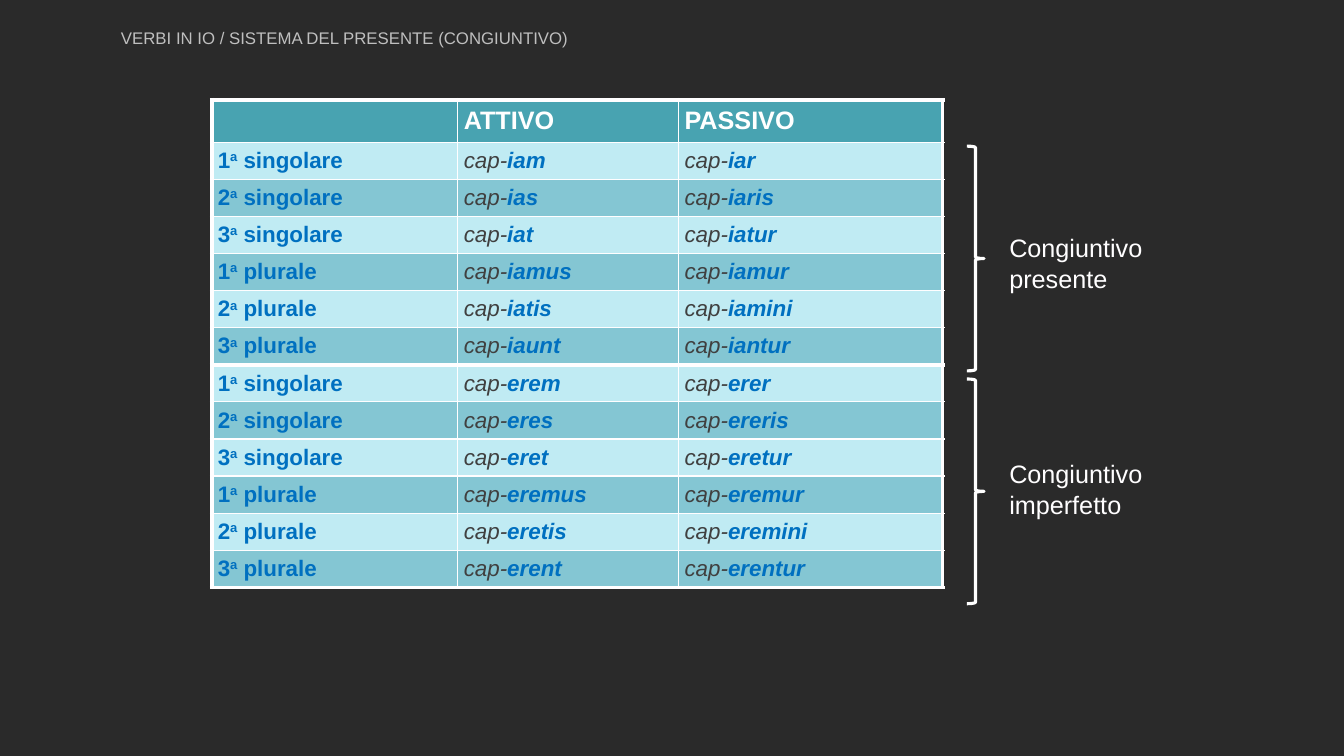
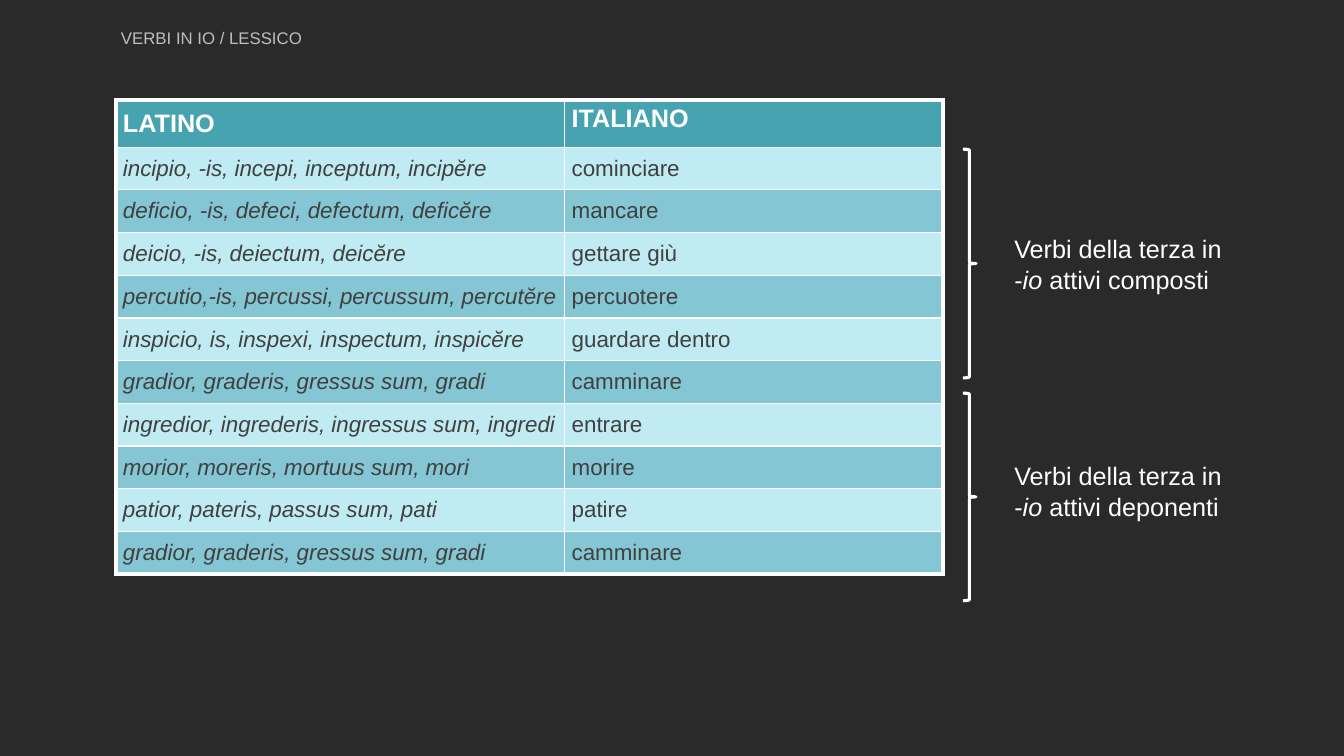
from pptx import Presentation
from pptx import util as u
from pptx.dml.color import RGBColor
from pptx.enum import shapes, text
from pptx.oxml.ns import qn
from lxml import etree

# Shared look
FONT = "Arial"
DARK, WHITE, TITLE_GREY = "2A2A2A", "FFFEFF", "BFBFBF"
HEADER, BANDS = "48A3B1", ("C0EBF3", "84C6D3")
INK, BLUE = "404040", "0070C0"
TITLE_BOX = (1.15, 0.22, 7.48, 0.3)
TABLE_TOP = 0.99
THICK, THIN = 3, 1


def rgb(color):
    return RGBColor.from_string(color)


def box(left, top, width, height):
    return [u.Inches(v) for v in (left, top, width, height)]


def add_run(p, words, size, color, bold=False, italic=False, raised=False):
    r = p.add_run()
    r.text = words
    f = r.font
    f.name, f.size, f.bold, f.italic = FONT, u.Pt(size), bold, italic
    f.color.rgb = rgb(color)
    if raised:
        r._r.get_or_add_rPr().set("baseline", "30000")


def set_margins(part, side, vertical):
    part.margin_left = part.margin_right = u.Inches(side)
    part.margin_top = part.margin_bottom = u.Inches(vertical)


def new_slide(prs, title):
    s = prs.slides.add_slide(prs.slide_layouts[5])
    sp = s.shapes.title
    sp.left, sp.top, sp.width, sp.height = box(*TITLE_BOX)
    tf = sp.text_frame
    tf.auto_size = text.MSO_AUTO_SIZE.NONE
    tf.vertical_anchor = text.MSO_ANCHOR.MIDDLE
    set_margins(tf, 0.05, 0.05)
    p = tf.paragraphs[0]
    p.alignment = text.PP_ALIGN.LEFT
    add_run(p, title, 12, TITLE_GREY)
    return s


def set_borders(cell, widths):
    """Draw the four cell edges; widths maps L, R, T, B to points."""
    tcPr = cell._tc.get_or_add_tcPr()
    for side, width in widths.items():
        ln = etree.SubElement(tcPr, qn(f"a:ln{side}"), w=str(u.Pt(width)))
        fill = etree.SubElement(ln, qn("a:solidFill"))
        etree.SubElement(fill, qn("a:srgbClr"), val=WHITE)


def add_grid(s, left, col_widths, header_height, height, rows, side, breaks=()):
    """Banded table; each cell is a list of (words, style) runs.

    Thick lines frame the table and lie above each row listed in breaks.
    """
    n, m = len(rows), len(col_widths)
    tb = s.shapes.add_table(n, m, *box(left, TABLE_TOP, sum(col_widths), height)).table
    tb.first_row = tb.horz_banding = False
    for col, width in zip(tb.columns, col_widths):
        col.width = u.Inches(width)
    body_height = (height - header_height) / (n - 1)
    thick_lines = {0, n, *breaks}
    for i, row in enumerate(rows):
        tb.rows[i].height = u.Inches(body_height if i else header_height)
        for j, runs in enumerate(row):
            cell = tb.cell(i, j)
            set_margins(cell, side, 0.05)
            cell.vertical_anchor = text.MSO_ANCHOR.MIDDLE
            set_borders(cell, {
                "L": THIN if j else THICK,
                "R": THICK if j == m - 1 else THIN,
                "T": THICK if i in thick_lines else THIN,
                "B": THICK if i + 1 in thick_lines else THIN,
            })
            cell.fill.solid()
            cell.fill.fore_color.rgb = rgb(BANDS[(i - 1) % 2] if i else HEADER)
            for words, style in runs:
                add_run(cell.text_frame.paragraphs[0], words, **style)
    return tb


def add_group(s, brace, label, runs):
    """Right brace with the label of the rows it spans."""
    sp = s.shapes.add_shape(shapes.MSO_SHAPE.RIGHT_BRACE, *box(*brace))
    sp.shadow.inherit = False
    sp.fill.background()
    sp.line.color.rgb = rgb("FFFFFF")
    sp.line.width = u.Pt(2.25)
    tf = s.shapes.add_textbox(*box(*label)).text_frame
    tf.word_wrap = True
    set_margins(tf, 0.05, 0.05)
    for words, italic in runs:
        add_run(tf.paragraphs[0], words, 18, WHITE, italic=italic)


# Cell styles
HEAD = dict(size=18, color="FFFFFF", bold=True)
PERSON = dict(size=16, color=BLUE, bold=True)
STEM = dict(size=16, color=INK, italic=True)
ENDING = dict(size=16, color=BLUE, bold=True, italic=True)
MEANING = dict(size=16, color=INK)

ENDINGS = [
    ("iam", "iar"), ("ias", "iaris"), ("iat", "iatur"),
    ("iamus", "iamur"), ("iatis", "iamini"), ("iaunt", "iantur"),
    ("erem", "erer"), ("eres", "ereris"), ("eret", "eretur"),
    ("eremus", "eremur"), ("eretis", "eremini"), ("erent", "erentur"),
]

LEXICON = [
    ("incipio, -is, incepi, inceptum, incipĕre", "cominciare"),
    ("deficio, -is, defeci, defectum, deficĕre", "mancare"),
    ("deicio, -is, deiectum, deicĕre", "gettare giù"),
    ("percutio,-is, percussi, percussum, percutĕre", "percuotere"),
    ("inspicio, is, inspexi, inspectum, inspicĕre", "guardare dentro"),
    ("gradior, graderis, gressus sum, gradi", "camminare"),
    ("ingredior, ingrederis, ingressus sum, ingredi", "entrare"),
    ("morior, moreris, mortuus sum, mori", "morire"),
    ("patior, pateris, passus sum, pati", "patire"),
    ("gradior, graderis, gressus sum, gradi", "camminare"),
]


def conjugation_slide(prs):
    s = new_slide(prs, "VERBI IN IO / SISTEMA DEL PRESENTE (CONGIUNTIVO)")
    rows = [[[], [("ATTIVO", HEAD)], [("PASSIVO", HEAD)]]]
    for i, endings in enumerate(ENDINGS):
        number = "singolare" if i % 6 < 3 else "plurale"
        person = [(str(i % 3 + 1), PERSON), ("a", dict(PERSON, raised=True)),
                  (f" {number}", PERSON)]
        rows.append([person] + [[("cap-", STEM), (e, ENDING)] for e in endings])
    add_grid(s, 2.1, (2.44, 2.19, 2.62), 0.42, 4.84, rows, side=0.06, breaks=(7,))
    for tense, brace_top, label_top in (("presente", 1.45, 2.26),
                                        ("imperfetto", 3.76, 4.5)):
        add_group(s, (9.59, brace_top, 0.17, 2.23), (9.96, label_top, 2.01, 0.71),
                  [(f"Congiuntivo {tense}", False)])


def lexicon_slide(prs):
    s = new_slide(prs, "VERBI IN IO / LESSICO")
    rows = [[[("LATINO", HEAD)], [("ITALIANO", HEAD)]]]
    rows += [[[(latin, STEM)], [(italian, MEANING)]] for latin, italian in LEXICON]
    tb = add_grid(s, 1.15, (4.45, 3.75), 0.47, 4.71, rows, side=0.07)
    tb.cell(0, 1).vertical_anchor = text.MSO_ANCHOR.TOP
    for kind, brace_top, brace_height, label_top in (
            ("composti", 1.48, 2.27, 2.27), ("deponenti", 3.9, 2.06, 4.52)):
        add_group(s, (9.55, brace_top, 0.13, brace_height),
                  (10.01, label_top, 2.31, 0.71),
                  [("Verbi della terza in -", False), ("io", True),
                   (f" attivi {kind}", False)])


def main():
    prs = Presentation()
    prs.slide_width, prs.slide_height = u.Inches(13.33), u.Inches(7.5)
    bg = prs.slide_master.background.fill
    bg.solid()
    bg.fore_color.rgb = rgb(DARK)
    conjugation_slide(prs)
    lexicon_slide(prs)
    prs.save("out.pptx")


if __name__ == "__main__":
    main()
